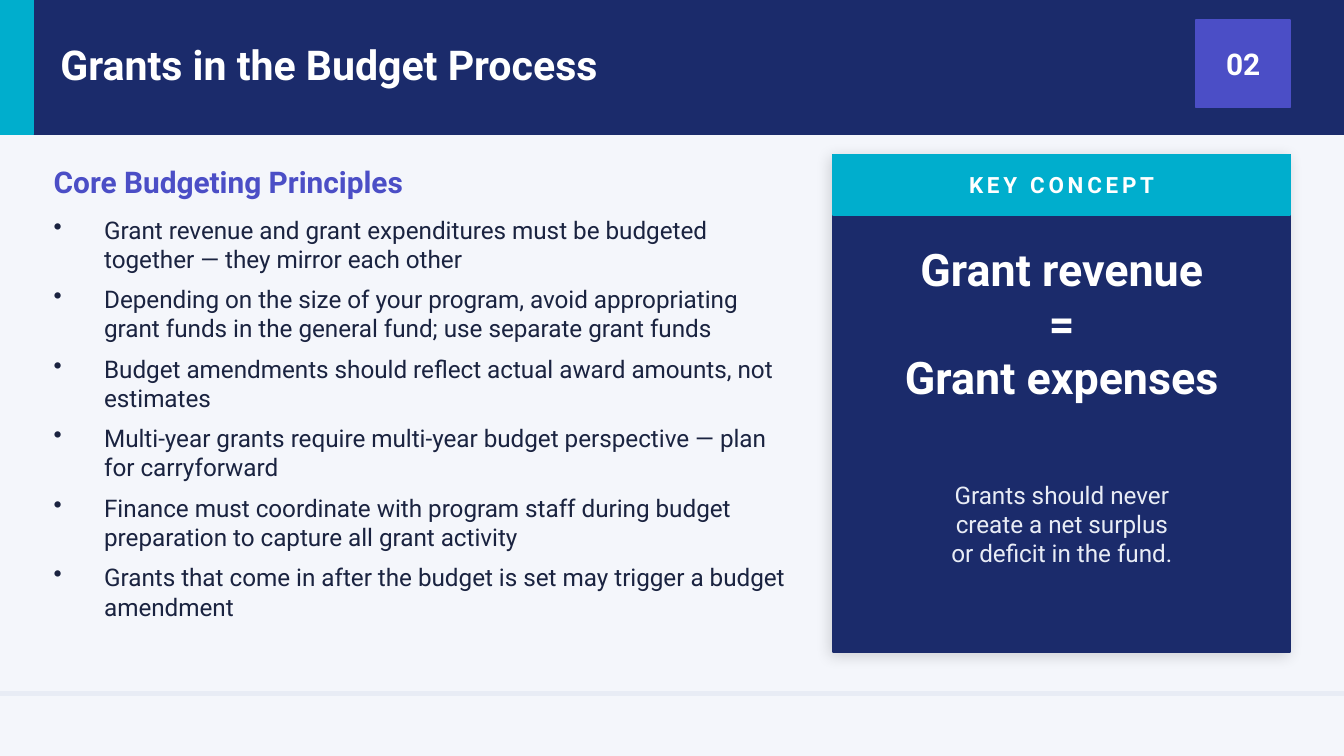
from dataclasses import dataclass

from lxml.etree import SubElement
from pptx import Presentation
from pptx.dml.color import RGBColor as RGB
from pptx.enum.shapes import MSO_SHAPE as Preset
from pptx.enum.text import MSO_ANCHOR as Anchor, PP_ALIGN as Align
from pptx.oxml.ns import qn
from pptx.util import Pt

EMU_PER_PX = 4572  # 200 px to the inch


def px(length):
    return length * EMU_PER_PX


@dataclass(frozen=True)
class Theme:
    font: str = "Roboto"
    background: str = "F4F6FB"
    navy: str = "1B2B6B"
    teal: str = "00AECD"
    violet: str = "4B4EC6"
    pale: str = "E8ECF5"
    ink: str = "1A2340"
    white: str = "FFFFFF"
    shadow: str = "000000"
    equation_size: int = 24
    title_size: int = 22
    heading_size: int = 16
    body_size: int = 13
    label_size: int = 12


class SlideBuilder:
    def __init__(self, slide, theme):
        self.slide = slide
        self.theme = theme
        fill = slide.background.fill
        fill.solid()
        fill.fore_color.rgb = RGB.from_string(theme.background)

    def block(self, box, color):
        shape = self.slide.shapes.add_shape(Preset.RECTANGLE, *map(px, box))
        shape.shadow.inherit = False
        for fill in (shape.fill, shape.line.fill):
            fill.solid()
            fill.fore_color.rgb = RGB.from_string(color)
        shape.line.width = Pt(1)
        return shape

    def card(self, box, color):
        """Add a block with a soft shadow to its lower left."""
        shape = self.block(box, color)
        effects = shape._element.spPr.find(qn("a:effectLst"))
        shadow = SubElement(effects, qn("a:outerShdw"), blurRad=str(Pt(8)),
                            dist=str(Pt(2)), dir=str(135 * 60000),
                            algn="bl", rotWithShape="0")
        tint = SubElement(shadow, qn("a:srgbClr"), val=self.theme.shadow)
        SubElement(tint, qn("a:alpha"), val="15000")

    def text(self, box, lines, size, color, bold=False, align=Align.LEFT,
             anchor=Anchor.MIDDLE, tracking=0, bullet_indent=0, space_after=0):
        """Add one paragraph per line; tracking and space_after are in points."""
        frame = self.slide.shapes.add_textbox(*map(px, box)).text_frame
        frame_format = {"word_wrap": True, "vertical_anchor": anchor,
                        "margin_left": 0, "margin_top": 0,
                        "margin_right": 0, "margin_bottom": 0}
        for name, value in frame_format.items():
            setattr(frame, name, value)

        font_format = {"name": self.theme.font, "size": Pt(size), "bold": bold}
        for index, line in enumerate(lines):
            paragraph = frame.add_paragraph() if index else frame.paragraphs[0]
            paragraph.alignment = align
            if bullet_indent:
                self.add_bullet(paragraph, bullet_indent)
            if space_after:
                paragraph.space_after = Pt(space_after)
            run = paragraph.add_run()
            run.text = line
            for name, value in font_format.items():
                setattr(run.font, name, value)
            run.font.color.rgb = RGB.from_string(color)
            if tracking:
                run._r.get_or_add_rPr().set("spc", str(tracking * 100))

    @staticmethod
    def add_bullet(paragraph, indent):
        properties = paragraph._p.get_or_add_pPr()
        properties.set("marL", str(px(indent)))
        properties.set("indent", str(-px(indent)))
        SubElement(properties, qn("a:buChar"), char="•")


PRINCIPLES = [
    "Grant revenue and grant expenditures must be budgeted together — they mirror each other",
    "Depending on the size of your program, avoid appropriating grant funds in the general fund; "
    "use separate grant funds",
    "Budget amendments should reflect actual award amounts, not estimates",
    "Multi-year grants require multi-year budget perspective — plan for carryforward",
    "Finance must coordinate with program staff during budget preparation to capture all grant activity",
    "Grants that come in after the budget is set may trigger a budget amendment",
]
EQUATION = ["Grant revenue", "=", "Grant expenses"]
EXPLANATION = ["Grants should never", "create a net surplus", "or deficit in the fund."]


def add_header(builder, width):
    theme = builder.theme
    number_box = (1780, 30, 140, 130)
    builder.block((0, 0, width, 200), theme.navy)
    builder.block((0, 0, 50, 200), theme.teal)
    builder.text((90, 20, 1700, 150), ["Grants in the Budget Process"],
                 theme.title_size, theme.white, bold=True)
    builder.block(number_box, theme.violet)
    builder.text(number_box, ["02"], theme.heading_size, theme.white,
                 bold=True, align=Align.CENTER)


def add_principles(builder):
    theme = builder.theme
    builder.text((80, 230, 1100, 80), ["Core Budgeting Principles"],
                 theme.heading_size, theme.violet, bold=True)
    builder.text((80, 320, 1100, 680), PRINCIPLES, theme.body_size, theme.ink,
                 anchor=Anchor.TOP, bullet_indent=75, space_after=6)


def add_key_concept(builder):
    theme = builder.theme
    left, top, width = 1240, 230, 680
    label_box = (left, top, width, 90)
    builder.card((left, top, width, 740), theme.navy)
    builder.block(label_box, theme.teal)
    builder.text(label_box, ["KEY CONCEPT"], theme.label_size, theme.white,
                 bold=True, align=Align.CENTER, tracking=2)
    builder.text((left, top + 120, width, 260), EQUATION, theme.equation_size,
                 theme.white, bold=True, align=Align.CENTER)
    builder.text((left + 20, top + 400, width - 40, 300), EXPLANATION,
                 theme.body_size, theme.pale, align=Align.CENTER)


def main():
    width, height = 2000, 1125
    presentation = Presentation()
    presentation.slide_width, presentation.slide_height = px(width), px(height)
    slide = presentation.slides.add_slide(presentation.slide_layouts[6])
    builder = SlideBuilder(slide, Theme())
    add_header(builder, width)
    builder.block((0, 1030, width, 4), builder.theme.pale)
    add_principles(builder)
    add_key_concept(builder)
    presentation.save("out.pptx")


if __name__ == "__main__":
    main()
